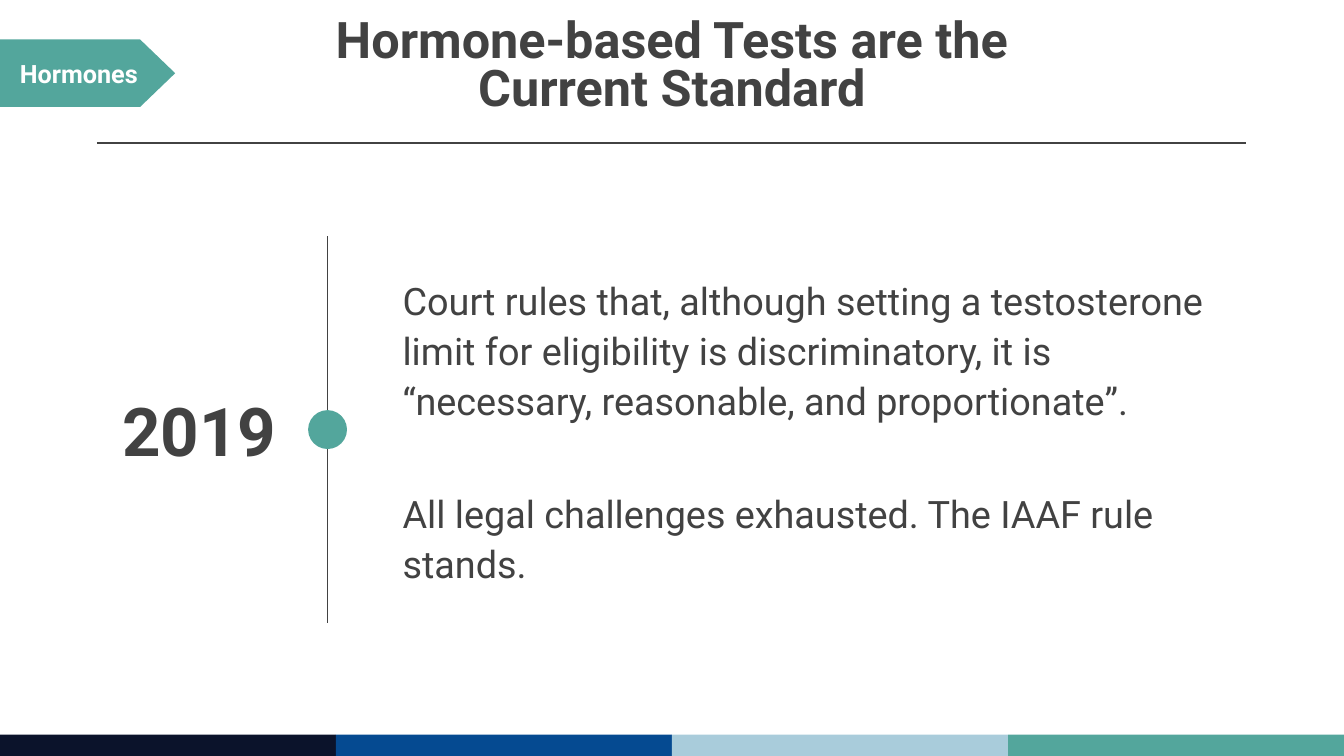
"""Builds a timeline slide about the 2019 ruling on hormone-based tests."""
from dataclasses import dataclass

import lxml.etree
import pptx
import pptx.dml.color
import pptx.enum.shapes
import pptx.enum.text
import pptx.oxml.ns
import pptx.util

Cm = pptx.util.Cm
Pt = pptx.util.Pt
SHAPE = pptx.enum.shapes.MSO_SHAPE
ALIGN = pptx.enum.text.PP_ALIGN
ANCHOR = pptx.enum.text.MSO_ANCHOR


@dataclass(frozen=True)
class Theme:
    font: str = "Roboto"
    ink: str = "424242"
    white: str = "FFFFFF"
    teal: str = "53A69C"
    bands: tuple = ("0B132B", "054A91", "A9CCDB", "53A69C")
    title: int = 72
    body: int = 54
    year: int = 96
    tag: int = 36


THEME = Theme()
WIDTH, HEIGHT = 67.74, 38.1


def rgb(value):
    return pptx.dml.color.RGBColor.from_string(value)


def place(sp, left, top, width, height):
    sp.left, sp.top, sp.width, sp.height = map(Cm, (left, top, width, height))


def format_text(tf, size, color=THEME.ink, bold=False, align=ALIGN.LEFT,
                anchor=ANCHOR.MIDDLE, margin=0.0, spacing=1.0):
    tf.word_wrap = True
    tf.auto_size = pptx.enum.text.MSO_AUTO_SIZE.NONE
    tf.vertical_anchor = anchor
    tf.margin_left = tf.margin_right = tf.margin_top = tf.margin_bottom = Cm(margin)
    for p in tf.paragraphs:
        p.alignment = align
        p.line_spacing = spacing
        for r in p.runs:
            r.font.name = THEME.font
            r.font.size = Pt(size)
            r.font.bold = bold
            r.font.color.rgb = rgb(color)


def add_shape(s, kind, box, color):
    sp = s.shapes.add_shape(kind, *map(Cm, box))
    sp.shadow.inherit = False
    sp.fill.solid()
    sp.fill.fore_color.rgb = rgb(color)
    sp.line.fill.background()
    return sp


def add_line(s, start, end, weight):
    line = s.shapes.add_connector(
        pptx.enum.shapes.MSO_CONNECTOR.STRAIGHT, *map(Cm, (*start, *end)))
    line.line.color.rgb = rgb(THEME.ink)
    line.line.width = Pt(weight)
    lxml.etree.SubElement(line._element.spPr, pptx.oxml.ns.qn("a:effectLst"))


def add_bands(s):
    width = WIDTH / len(THEME.bands)
    for i, color in enumerate(THEME.bands):
        add_shape(s, SHAPE.RECTANGLE, (i * width, 37.03, width, HEIGHT - 37.03), color)


def add_tag(s, text):
    sp = add_shape(s, SHAPE.PENTAGON, (0, 1.99, 8.83, 3.4), THEME.teal)
    sp.adjustments[0] = 0.52
    sp.text_frame.text = text
    format_text(sp.text_frame, THEME.tag, THEME.white, True, ALIGN.CENTER, margin=0.25)


def fill_title(s, text):
    sp = s.shapes.title
    place(sp, 12.93, 0.69, 41.88, 5.46)
    sp.text_frame.text = text
    format_text(sp.text_frame, THEME.title, bold=True, align=ALIGN.CENTER, spacing=0.8)


def fill_body(s, items):
    sp = s.placeholders[1]
    place(sp, 20.29, 11.91, 41.88, 19.48)
    tf = sp.text_frame
    tf.text = "\n".join(items)
    format_text(tf, THEME.body, spacing=1.1)
    for i, p in enumerate(tf.paragraphs):
        p.space_before = Pt(90 if i else 26)
        pPr = p._p.get_or_add_pPr()
        pPr.set("marL", "0")
        pPr.set("indent", "0")
        lxml.etree.SubElement(pPr, pptx.oxml.ns.qn("a:buNone"))


def add_milestone(s, year):
    axis, middle, dot = 16.51, 21.65, 1.96
    add_line(s, (axis, 11.91), (axis, 31.39), 2.25)
    add_shape(s, SHAPE.OVAL, (axis - dot / 2, middle - dot / 2, dot, dot), THEME.teal)
    tf = s.shapes.add_textbox(*map(Cm, (5.92, 19.35, 8.36, 4.62))).text_frame
    tf.text = year
    format_text(tf, THEME.year, bold=True, anchor=ANCHOR.TOP, margin=0.25)


def main():
    prs = pptx.Presentation()
    prs.slide_width, prs.slide_height = Cm(WIDTH), Cm(HEIGHT)
    s = prs.slides.add_slide(prs.slide_layouts[1])
    add_line(s, (4.88, 7.19), (62.79, 7.19), 3)
    add_bands(s)
    add_tag(s, "Hormones")
    fill_title(s, "Hormone-based Tests are the Current Standard")
    fill_body(s, (
        "Court rules that, although setting a testosterone limit for eligibility "
        "is discriminatory, it is “necessary, reasonable, and proportionate”.",
        "All legal challenges exhausted. The IAAF rule stands.",
    ))
    add_milestone(s, "2019")
    prs.save("out.pptx")


if __name__ == "__main__":
    main()
